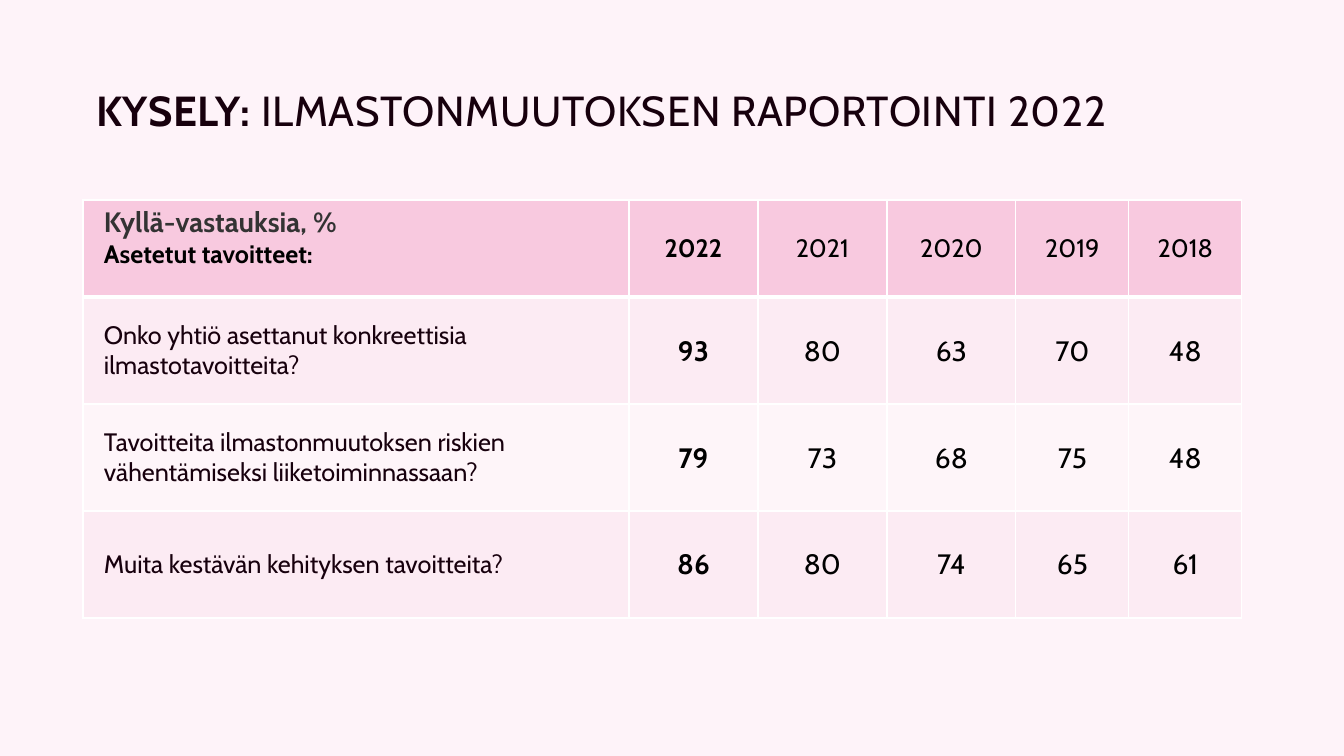
from dataclasses import dataclass

from lxml import etree
from pptx import Presentation
from pptx.dml.color import RGBColor
from pptx.enum.text import MSO_ANCHOR, PP_ALIGN
from pptx.oxml.ns import qn
from pptx.util import Emu, Pt

MIDDLE, TOP = MSO_ANCHOR.MIDDLE, MSO_ANCHOR.TOP
LEFT, CENTER = PP_ALIGN.LEFT, PP_ALIGN.CENTER

TITLE = [("KYSELY:", True), ("\u00a0ILMASTONMUUTOKSEN RAPORTOINTI 2022".replace("\u00a0", " "), False)]
HEADING = ("Kyllä-vastauksia, %", "Asetetut tavoitteet:")
YEARS = ["2022", "2021", "2020", "2019", "2018"]
ANSWERS = [
    ("Onko yhtiö asettanut konkreettisia ilmastotavoitteita?", [93, 80, 63, 70, 48]),
    ("Tavoitteita ilmastonmuutoksen riskien vähentämiseksi liiketoiminnassaan?",
     [79, 73, 68, 75, 48]),
    ("Muita kestävän kehityksen tavoitteita?", [86, 80, 74, 65, 61]),
]

PAGE_SIZE = (1344, 756)
TITLE_BOX = (86, 40, 1159, 146)
TABLE_CORNER = (83, 200)
COLUMN_WIDTHS = [546, 129, 129, 129, 113, 113]
HEADER_HEIGHT, ANSWER_HEIGHT = 97, 107
HEADING_MARGINS = (21, 5, 21, 5)
QUESTION_MARGINS = (21, 3, 21, 3)
VALUE_MARGINS = (1, 1, 1, 0)


@dataclass(frozen=True)
class Theme:
    font: str = "Cabin"
    page: str = "FEF3F9"
    ink: str = "17000D"
    black: str = "000000"
    grey: str = "333333"
    header: str = "F8C9DF"
    bands: tuple = ("FCEBF3", "FEF5F9")
    border: str = "FFFFFF"
    title: int = 30
    large: int = 20
    body: int = 18


THEME = Theme()


def px(length):
    return Emu(round(length * 914400 / 100.8))


def add_span(para, text, size, color, bold=False):
    span = para.add_run()
    span.text = text
    span.font.name = THEME.font
    span.font.size = Pt(size)
    span.font.bold = bold
    span.font.color.rgb = RGBColor.from_string(color)
    return span


def add_borders(cell, bottom):
    """Draw all four sides in 1 pt, except the bottom in the given points."""
    properties = cell._tc.get_or_add_tcPr()
    for side, width in (("L", 1), ("R", 1), ("T", 1), ("B", bottom)):
        line = etree.SubElement(properties, qn(f"a:ln{side}"), w=str(Pt(width)))
        fill = etree.SubElement(line, qn("a:solidFill"))
        etree.SubElement(fill, qn("a:srgbClr"), val=THEME.border)


def format_cell(cell, fill, margins, anchor=MIDDLE, align=LEFT, bottom=1):
    """Style a cell and return its paragraph."""
    add_borders(cell, bottom)
    cell.fill.solid()
    cell.fill.fore_color.rgb = RGBColor.from_string(fill)
    (cell.margin_left, cell.margin_top,
     cell.margin_right, cell.margin_bottom) = map(px, margins)
    cell.vertical_anchor = anchor
    para = cell.text_frame.paragraphs[0]
    para.alignment = align
    return para


def fill_values(table, row, values, fill, size, bottom=1):
    """Write the year columns, with the newest year in bold."""
    for column, value in enumerate(values, 1):
        para = format_cell(table.cell(row, column), fill, VALUE_MARGINS,
                           align=CENTER, bottom=bottom)
        add_span(para, str(value), size, THEME.black, bold=column == 1)


def add_title(page):
    title = page.shapes.title
    title.left, title.top, title.width, title.height = map(px, TITLE_BOX)
    frame = title.text_frame
    frame.word_wrap = True
    frame.vertical_anchor = MIDDLE
    para = frame.paragraphs[0]
    para.alignment = LEFT
    para.line_spacing = 0.9
    for text, bold in TITLE:
        span = add_span(para, text, THEME.title, THEME.ink, bold)
        span.font._element.set("spc", "50")


def add_answer_table(page):
    heights = [HEADER_HEIGHT] + [ANSWER_HEIGHT] * len(ANSWERS)
    table = page.shapes.add_table(
        len(heights), len(COLUMN_WIDTHS), *map(px, TABLE_CORNER),
        px(sum(COLUMN_WIDTHS)), px(sum(heights))).table
    for column, width in zip(table.columns, COLUMN_WIDTHS):
        column.width = px(width)
    for row, height in zip(table.rows, heights):
        row.height = px(height)

    para = format_cell(table.cell(0, 0), THEME.header, HEADING_MARGINS, TOP, bottom=3)
    add_span(para, HEADING[0], THEME.large, THEME.grey, bold=True)
    para.add_line_break()
    add_span(para, HEADING[1], THEME.body, THEME.black, bold=True)
    fill_values(table, 0, YEARS, THEME.header, THEME.body, bottom=3)

    for row, (question, values) in enumerate(ANSWERS, 1):
        band = THEME.bands[(row - 1) % 2]
        para = format_cell(table.cell(row, 0), band, QUESTION_MARGINS)
        add_span(para, question, THEME.body, THEME.ink)
        fill_values(table, row, values, band, THEME.large)


def main():
    deck = Presentation()
    deck.slide_width, deck.slide_height = map(px, PAGE_SIZE)
    page = deck.slides.add_slide(deck.slide_layouts[5])
    page.background.fill.solid()
    page.background.fill.fore_color.rgb = RGBColor.from_string(THEME.page)
    add_title(page)
    add_answer_table(page)
    deck.save("out.pptx")


if __name__ == "__main__":
    main()
